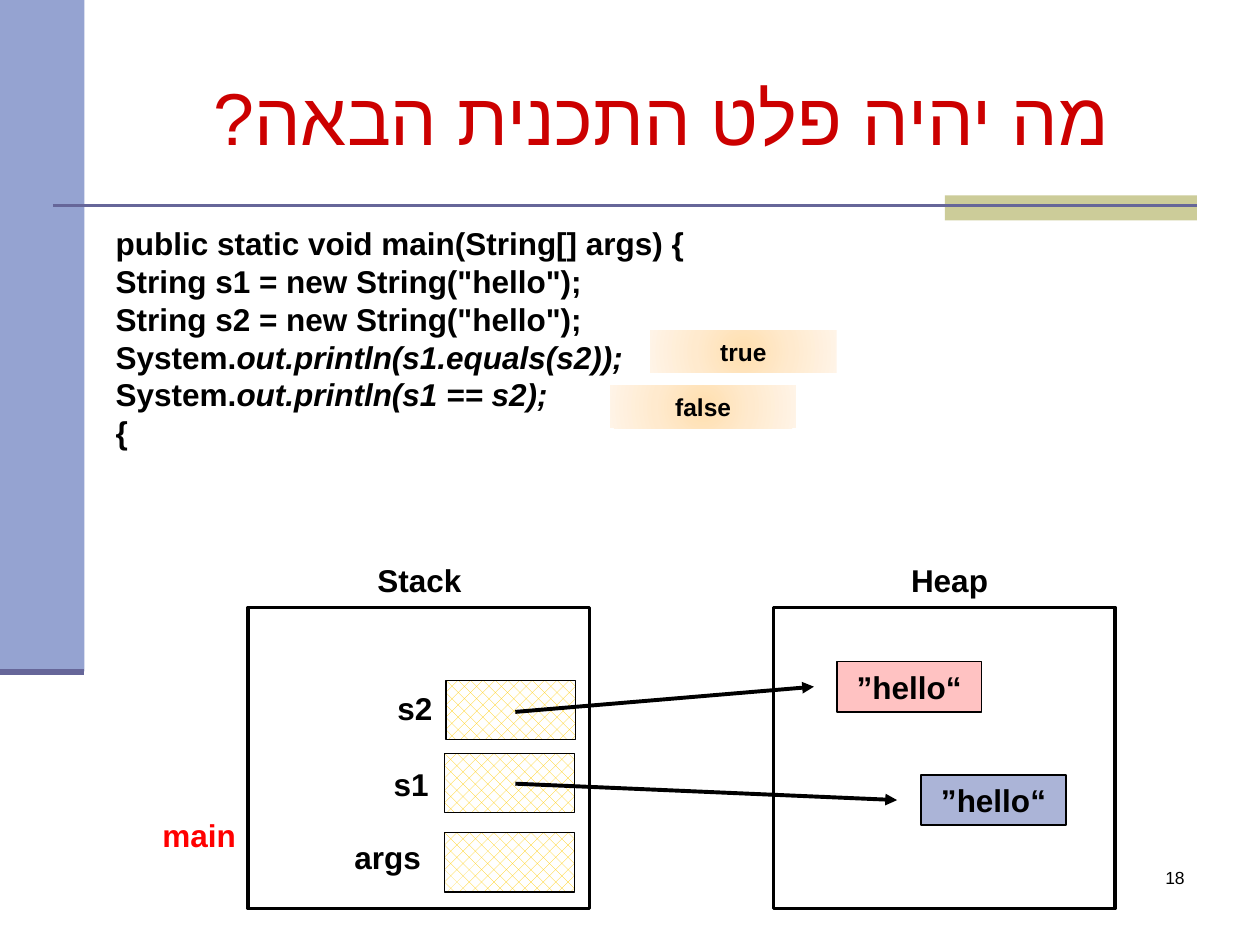
from lxml.etree import SubElement
from pptx import Presentation
from pptx.dml.color import RGBColor
from pptx.enum.dml import MSO_PATTERN
from pptx.enum.shapes import MSO_CONNECTOR, MSO_SHAPE
from pptx.enum.text import MSO_ANCHOR, MSO_AUTO_SIZE, PP_ALIGN
from pptx.oxml.ns import qn
from pptx.util import Inches, Pt

BLACK = RGBColor(0x00, 0x00, 0x00)
WHITE = RGBColor(0xFF, 0xFF, 0xFF)
RED = RGBColor(0xFF, 0x00, 0x00)
TITLE_RED = RGBColor(0xCC, 0x00, 0x00)
PERIWINKLE = RGBColor(0x95, 0xA3, 0xD1)
KHAKI = RGBColor(0xCC, 0xCC, 0x99)
PURPLE = RGBColor(0x66, 0x66, 0x99)
YELLOW = RGBColor(0xFF, 0xCC, 0x00)
PINK = RGBColor(0xFF, 0xC2, 0xC2)
BLUE = RGBColor(0xAB, 0xB4, 0xD7)
GLOW = ((0, "FFDFAF"), (50, "FFEACE"), (100, "FFF4E7"))


class SlideBuilder:
    font = "Arial"

    def __init__(self, prs):
        self.s = prs.slides.add_slide(prs.slide_layouts[5])

    def add_runs(self, p, runs, size=18, color=BLACK, bold=True, align=None, rtl=False, font=None):
        if align is not None:
            p.alignment = align
        if rtl:
            p._p.get_or_add_pPr().set("rtl", "1")
        for text, italic in runs:
            r = p.add_run()
            r.text = text
            style = {"name": font or self.font, "size": Pt(size), "bold": bold, "italic": italic}
            for key, value in style.items():
                setattr(r.font, key, value)
            r.font.color.rgb = color
            SubElement(r._r.get_or_add_rPr(), qn("a:cs"), typeface=self.font)

    def title(self, text, box):
        sp = self.s.shapes.title
        for key, value in zip(("left", "top", "width", "height"), box):
            setattr(sp, key, Inches(value))
        tf = sp.text_frame
        tf.vertical_anchor = MSO_ANCHOR.MIDDLE
        self.add_runs(tf.paragraphs[0], [(text, False)], 42, TITLE_RED, False,
                      PP_ALIGN.CENTER, True, "Times New Roman")

    def text(self, lines, box, wrap=False, **style):
        tf = self.s.shapes.add_textbox(*map(Inches, box)).text_frame
        tf.word_wrap = wrap
        tf.auto_size = MSO_AUTO_SIZE.SHAPE_TO_FIT_TEXT
        for i, runs in enumerate(lines):
            p = tf.add_paragraph() if i else tf.paragraphs[0]
            self.add_runs(p, runs, **style)

    def label(self, text, box, color=BLACK):
        self.text([[(text, False)]], box, color=color, align=PP_ALIGN.RIGHT, rtl=True)

    def rect(self, box, fill=None, line=None, text=None, size=18):
        sp = self.s.shapes.add_shape(MSO_SHAPE.RECTANGLE, *map(Inches, box))
        sp.shadow.inherit = False
        if fill is not None:
            sp.fill.solid()
            sp.fill.fore_color.rgb = fill
        if line:
            sp.line.color.rgb = BLACK
            sp.line.width = Pt(line)
        else:
            sp.line.fill.background()
        if text:
            self.add_runs(sp.text_frame.paragraphs[0], [(text, False)], size,
                          align=PP_ALIGN.CENTER, rtl=True)
        return sp

    def variable(self, name, cell, label):
        sp = self.rect(cell, line=0.75)
        sp.fill.patterned()
        sp.fill.pattern = MSO_PATTERN.PERCENT_30
        sp.fill.fore_color.rgb = YELLOW
        sp.fill.back_color.rgb = WHITE
        self.label(name, label)

    def answer(self, text, box):
        sp = self.rect(box, text=text, size=14)
        sp.fill.gradient()
        grad = sp._element.spPr.find(qn("a:gradFill"))
        for child in list(grad):
            grad.remove(child)
        stops = SubElement(grad, qn("a:gsLst"))
        for pos, color in GLOW:
            stop = SubElement(stops, qn("a:gs"), pos=str(pos * 1000))
            SubElement(stop, qn("a:srgbClr"), val=color)
        circle = SubElement(grad, qn("a:path"), path="circle")
        SubElement(circle, qn("a:fillToRect"), **dict.fromkeys("ltrb", "50000"))

    def line(self, start, end, color=BLACK, width=2.25, arrow=False):
        c = self.s.shapes.add_connector(MSO_CONNECTOR.STRAIGHT, *map(Inches, start + end))
        c.line.color.rgb = color
        c.line.width = Pt(width)
        spPr = c._element.spPr
        if arrow:
            SubElement(spPr.find(qn("a:ln")), qn("a:tailEnd"), type="triangle")
        SubElement(spPr, qn("a:effectLst"))


def main():
    prs = Presentation()
    prs.slide_width, prs.slide_height = Inches(10), Inches(7.5)
    b = SlideBuilder(prs)

    b.rect((0, 0, 0.67, 5.33), PERIWINKLE)
    b.rect((7.5, 1.55, 2, 0.2), KHAKI)
    b.line((0.42, 1.63), (9.5, 1.63), PURPLE, 1.5)
    b.line((0, 5.33), (0.67, 5.33), PURPLE, 3.5)
    b.text([[("18", False)]], (7.42, 6.83, 2.08, 0.5), True,
           size=10, bold=False, align=PP_ALIGN.RIGHT)
    b.title("מה יהיה פלט התכנית הבאה?", (1, 0.3, 8.5, 1.25))

    for name, left, label in (("Stack", 1.97, (2.88, 4.4, 0.88, 0.4)),
                              ("Heap", 6.14, (7.12, 4.4, 0.82, 0.4))):
        b.rect((left, 4.82, 2.71, 2.39), WHITE, 2)
        b.label(name, label)
    for name, left, top, label in (("args", 3.53, 6.61, (2.71, 6.6, 0.73, 0.4)),
                                   ("s1", 3.53, 5.98, (3.02, 6.02, 0.48, 0.4)),
                                   ("s2", 3.54, 5.4, (3.05, 5.42, 0.48, 0.4))):
        b.variable(name, (left, top, 1.03, 0.47), label)
    b.label("main", (1.18, 6.43, 0.79, 0.4), RED)

    b.text([[("public static void main(String[] args) {", False)],
            [('String s1 = new String("hello");', False)],
            [('String s2 = new String("hello");', False)],
            [("System.", False), ("out.println(s1.equals(s2));", True)],
            [("System.", False), ("out.println(s1 == s2);", True)],
            [("{", False)]], (0.82, 1.73, 5, 1.92), True)
    for text, left, top in (("true", 5.16, 2.62), ("false", 4.84, 3.06)):
        b.answer(text, (left, top, 1.48, 0.34))

    for left, top, fill in ((6.64, 5.25, PINK), (7.31, 6.15, BLUE)):
        b.rect((left, top, 1.15, 0.4), fill, 1, "“hello”")
    b.line((4.09, 5.65), (6.46, 5.45), arrow=True)
    b.line((4.09, 6.22), (7.12, 6.35), arrow=True)

    prs.save("out.pptx")


if __name__ == "__main__":
    main()
